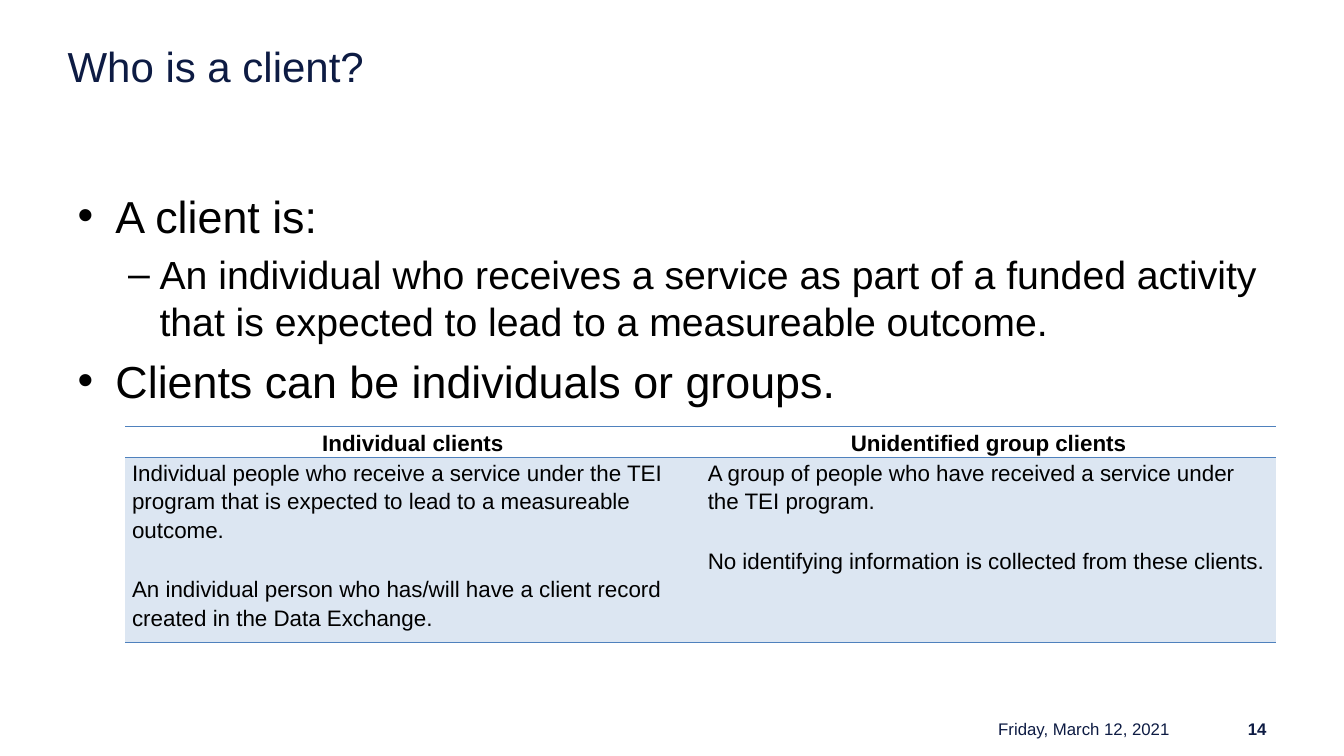
from dataclasses import dataclass

from lxml.etree import SubElement
from pptx import Presentation
from pptx.dml.color import RGBColor
from pptx.enum.text import MSO_ANCHOR, MSO_AUTO_SIZE, PP_ALIGN
from pptx.oxml.ns import qn
from pptx.util import Inches, Pt


@dataclass(frozen=True)
class Theme:
    font: str = "Arial"
    navy: str = "0D1B43"
    black: str = "000000"
    rule: str = "4F81BD"
    tint: str = "DCE6F2"
    title: int = 30
    levels: tuple = (32, 28)
    cell: int = 16
    foot: int = 12


THEME = Theme()

POINTS = [
    (0, "A client is:"),
    (1, "An individual who receives a service as part of a funded activity "
        "that is expected to lead to a measureable outcome."),
    (0, "Clients can be individuals or groups."),
]
HEADS = ["Individual clients", "Unidentified group clients"]
DETAILS = [
    "Individual people who receive a service under the TEI program that is "
    "expected to lead to a measureable outcome.\n"
    "An individual person who has/will have a client record created in the "
    "Data Exchange.",
    "A group of people who have received a service under the TEI program.\n"
    "No identifying information is collected from these clients.",
]


def place(shape, left, top, width, height):
    shape.left, shape.top = Inches(left), Inches(top)
    shape.width, shape.height = Inches(width), Inches(height)


def style(para, size, color, bold=False, align=PP_ALIGN.LEFT):
    para.alignment = align
    for run in para.runs:
        font = run.font
        font.name, font.size, font.bold = THEME.font, Pt(size), bold
        font.color.rgb = RGBColor.from_string(color)


def add_title(slide, text):
    title = slide.shapes.title
    place(title, 0.67, 0.4, 12, 0.66)
    frame = title.text_frame
    frame.text = text
    frame.auto_size = MSO_AUTO_SIZE.NONE
    frame.vertical_anchor = MSO_ANCHOR.TOP
    frame.margin_left = frame.margin_right = 0
    frame.margin_top = frame.margin_bottom = 0
    style(frame.paragraphs[0], THEME.title, THEME.navy)


def add_list(slide, points):
    body = slide.placeholders[1]
    place(body, 0.67, 1.75, 12, 4.95)
    frame = body.text_frame
    frame.text = "\n".join(text for _, text in points)
    frame.auto_size = MSO_AUTO_SIZE.NONE
    frame.margin_top = Inches(0.12)
    for i, (para, (level, _)) in enumerate(zip(frame.paragraphs, points)):
        size = THEME.levels[level]
        para.level = level
        para.space_before = Pt(size * 0.2 if i else 0)
        style(para, size, THEME.black)


def add_rules(cell):
    """Draw lines above and below a cell and none at its sides."""
    props = cell._tc.get_or_add_tcPr()
    for tag in ("lnL", "lnR", "lnT", "lnB"):
        line = SubElement(props, qn(f"a:{tag}"), w=str(Pt(1)))
        if tag in ("lnL", "lnR"):
            SubElement(line, qn("a:noFill"))
        else:
            fill = SubElement(line, qn("a:solidFill"))
            SubElement(fill, qn("a:srgbClr"), val=THEME.rule)


def fill_cell(cell, text, head):
    add_rules(cell)
    if head:
        cell.fill.background()
    else:
        cell.fill.solid()
        cell.fill.fore_color.rgb = RGBColor.from_string(THEME.tint)
    cell.margin_left = cell.margin_right = Inches(0.07)
    cell.margin_top = cell.margin_bottom = 0
    cell.vertical_anchor = MSO_ANCHOR.MIDDLE if head else MSO_ANCHOR.TOP
    cell.text_frame.text = text
    align = PP_ALIGN.CENTER if head else PP_ALIGN.LEFT
    for i, para in enumerate(cell.text_frame.paragraphs):
        para.line_spacing = 1.15
        para.space_before = Pt(22 if i else 0)
        style(para, THEME.cell, THEME.black, head, align)


def add_grid(slide, rows, heights):
    frame = slide.shapes.add_table(
        len(rows), len(rows[0]), Inches(1.24), Inches(4.23),
        Inches(11.42), Inches(sum(heights)))
    table = frame.table
    table.horz_banding = False
    table.first_row = False
    for r, (texts, height) in enumerate(zip(rows, heights)):
        table.rows[r].height = Inches(height)
        for c, text in enumerate(texts):
            fill_cell(table.cell(r, c), text, head=r == 0)


def add_foot(slide, text, left, width, bold=False):
    box = slide.shapes.add_textbox(
        Inches(left), Inches(7.12), Inches(width), Inches(0.23))
    frame = box.text_frame
    frame.word_wrap = True
    frame.vertical_anchor = MSO_ANCHOR.MIDDLE
    frame.text = text
    style(frame.paragraphs[0], THEME.foot, THEME.navy, bold, PP_ALIGN.RIGHT)


def main():
    deck = Presentation()
    deck.slide_width, deck.slide_height = Inches(13.33), Inches(7.5)
    slide = deck.slides.add_slide(deck.slide_layouts[1])
    add_title(slide, "Who is a client?")
    add_list(slide, POINTS)
    add_foot(slide, "14", 11.57, 1.09, bold=True)
    add_foot(slide, "Friday, March 12, 2021", 8.59, 3.11)
    add_grid(slide, [HEADS, DETAILS], [0.29, 1.73])
    deck.save("out.pptx")


if __name__ == "__main__":
    main()
